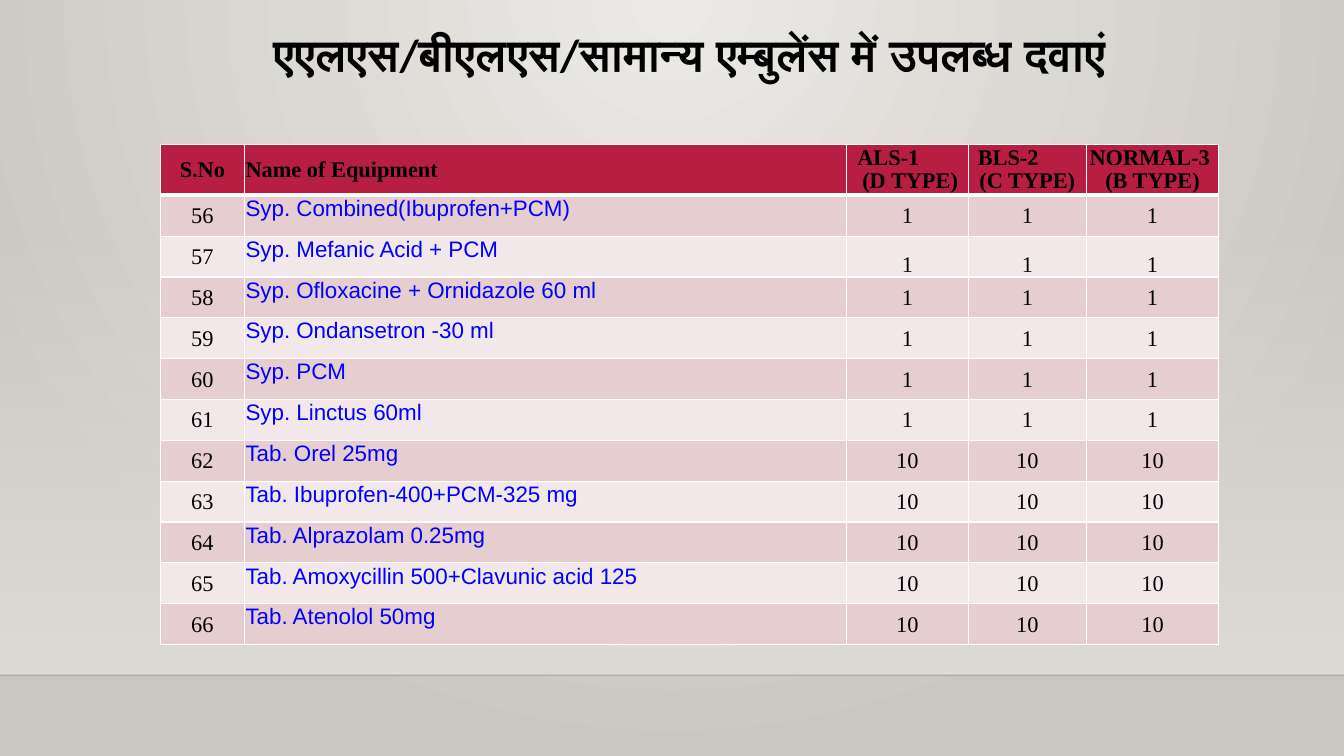
from lxml.etree import SubElement
from pptx import Presentation
from pptx.dml.color import RGBColor
from pptx.enum.shapes import MSO_CONNECTOR, MSO_SHAPE
from pptx.enum.text import MSO_ANCHOR, PP_ALIGN
from pptx.oxml.ns import qn
from pptx.util import Pt

TITLE = "एएलएस/बीएलएस/सामान्य एम्बुलेंस में उपलब्ध दवाएं"
HEADERS = ["S.No", "Name of Equipment", "ALS-1\n(D TYPE)", "BLS-2\n(C TYPE)", "NORMAL-3\n(B TYPE)"]
FIRST_NUMBER = 56
MEDICINES = [
    ("Syp. Combined(Ibuprofen+PCM)", 1),
    ("Syp. Mefanic Acid + PCM", 1),
    ("Syp. Ofloxacine + Ornidazole 60 ml", 1),
    ("Syp. Ondansetron -30 ml", 1),
    ("Syp. PCM", 1),
    ("Syp. Linctus 60ml", 1),
    ("Tab. Orel 25mg", 10),
    ("Tab. Ibuprofen-400+PCM-325 mg", 10),
    ("Tab. Alprazolam 0.25mg", 10),
    ("Tab. Amoxycillin 500+Clavunic acid 125", 10),
    ("Tab. Atenolol 50mg", 10),
]
LOW_NUMBER = 57
AMBULANCES = 3
COLUMNS = [60.2, 430, 87, 84.4, 94.4]
HEADER_HEIGHT, ROW_HEIGHT = 35.8, 29.17
LEFT, TABLE_TOP, WIDTH = 114.5, 103, 756
SLIDE_W, SLIDE_H, FLOOR = 960, 540, 482.4
SUBTYPE_INDENTS = {2: (7, 4), 3: (6, 0), 4: (1.5, 0)}

THEME = {
    "text": "000000", "name": "0000FF", "header": "B71E42", "bands": ("E6CDCF", "F3E8E9"),
    "grid": "FFFFFF", "glow": "ECEAE7", "edge": "CAC7C1", "wall": "DFDBD5", "floor": "000001",
    "title_font": "Calibri", "font": "Times New Roman", "name_font": "Arial",
    "title_size": 32, "size": 16,
}


def rgb(key):
    return RGBColor.from_string(THEME.get(key, key))


def write(tf, text, *, font="font", size="size", color="text", bold=False,
          align=PP_ALIGN.CENTER, spacing=None):
    for i, line in enumerate(text.split("\n")):
        p = tf.paragraphs[0] if i == 0 else tf.add_paragraph()
        p.alignment = align
        p.line_spacing = spacing
        r = p.add_run()
        r.text = line
        r.font.name = THEME[font]
        r.font.size = Pt(THEME[size])
        r.font.bold = bold
        r.font.color.rgb = rgb(color)


def gradient(fill, first, last):
    fill.gradient()
    for stop, key, position in zip(fill.gradient_stops, (first, last), (0, 1)):
        stop.color.rgb = rgb(key)
        stop.position = position


def set_alpha(color, percent):
    SubElement(color, qn("a:alpha"), val=str(percent * 1000))


def add_background(s):
    gradient(s.background.fill, "glow", "edge")
    grad = s.background._cSld.find(".//" + qn("a:gradFill"))
    grad.remove(grad.find(qn("a:lin")))
    path = SubElement(grad, qn("a:path"), {"path": "circle"})
    SubElement(path, qn("a:fillToRect"), l="43000", t="0", r="43000", b="100000")

    wall = s.shapes.add_shape(MSO_SHAPE.RECTANGLE, 0, Pt(159), Pt(SLIDE_W), Pt(FLOOR - 159))
    wall.shadow.inherit = False
    wall.line.fill.background()
    gradient(wall.fill, "wall", "wall")
    wall.fill.gradient_angle = 270
    set_alpha(wall._element.spPr.find(".//" + qn("a:srgbClr")), 0)

    edge = s.shapes.add_connector(MSO_CONNECTOR.STRAIGHT, 0, Pt(FLOOR), Pt(SLIDE_W), Pt(FLOOR))
    edge.line.width = Pt(1)
    edge.line.color.rgb = rgb("floor")
    spPr = edge._element.spPr
    set_alpha(spPr.find(".//" + qn("a:srgbClr")), 20)
    SubElement(spPr, qn("a:effectLst"))


def add_title(s):
    box = s.shapes.add_textbox(Pt(LEFT), Pt(20), Pt(WIDTH), Pt(83))
    box.text_frame.word_wrap = True
    write(box.text_frame, TITLE, font="title_font", size="title_size", bold=True, spacing=0.9)


def style_cell(cell, fill, anchor, top=1, bottom=1):
    cell.margin_left = cell.margin_right = cell.margin_top = Pt(0.75)
    cell.margin_bottom = 0
    cell.vertical_anchor = anchor
    tcPr = cell._tc.get_or_add_tcPr()
    for side, width in (("L", 1), ("R", 1), ("T", top), ("B", bottom)):
        ln = SubElement(tcPr, qn("a:ln" + side), w=str(Pt(width)))
        solid = SubElement(ln, qn("a:solidFill"))
        SubElement(solid, qn("a:srgbClr"), val=THEME["grid"])
    cell.fill.solid()
    cell.fill.fore_color.rgb = rgb(fill)


def add_header(table):
    for col, text in enumerate(HEADERS):
        cell = table.cell(0, col)
        style_cell(cell, "header", MSO_ANCHOR.MIDDLE, bottom=3)
        align = PP_ALIGN.LEFT if col == 1 else PP_ALIGN.CENTER
        write(cell.text_frame, text, bold=True, align=align, spacing=0.93)
        if col in SUBTYPE_INDENTS:
            kind, subtype = cell.text_frame.paragraphs
            kind.alignment = PP_ALIGN.LEFT
            for p, indent in zip((kind, subtype), SUBTYPE_INDENTS[col]):
                p._p.get_or_add_pPr().set("marL", str(Pt(indent)))


def add_medicines(table):
    for row, (name, count) in enumerate(MEDICINES, 1):
        number = FIRST_NUMBER + row - 1
        values = [number, name] + [count] * AMBULANCES
        for col, value in enumerate(values):
            cell = table.cell(row, col)
            anchor = MSO_ANCHOR.MIDDLE
            if col == 1:
                anchor = MSO_ANCHOR.TOP
            elif col > 1 and number == LOW_NUMBER:
                anchor = MSO_ANCHOR.BOTTOM
            style_cell(cell, THEME["bands"][(row - 1) % 2], anchor, top=3 if row == 1 else 1)
            look = dict(font="name_font", color="name", align=PP_ALIGN.LEFT) if col == 1 else {}
            write(cell.text_frame, str(value), **look)


def add_medicine_table(s):
    heights = [HEADER_HEIGHT] + [ROW_HEIGHT] * len(MEDICINES)
    frame = s.shapes.add_table(len(heights), len(COLUMNS), Pt(LEFT), Pt(TABLE_TOP),
                               Pt(WIDTH), Pt(sum(heights)))
    table = frame.table
    for column, width in zip(table.columns, COLUMNS):
        column.width = Pt(width)
    for row, height in zip(table.rows, heights):
        row.height = Pt(height)
    add_header(table)
    add_medicines(table)


def main():
    """Build the ambulance medicine slide."""
    prs = Presentation()
    prs.slide_width, prs.slide_height = Pt(SLIDE_W), Pt(SLIDE_H)
    s = prs.slides.add_slide(prs.slide_layouts[6])
    add_background(s)
    add_title(s)
    add_medicine_table(s)
    prs.save("out.pptx")


if __name__ == "__main__":
    main()
